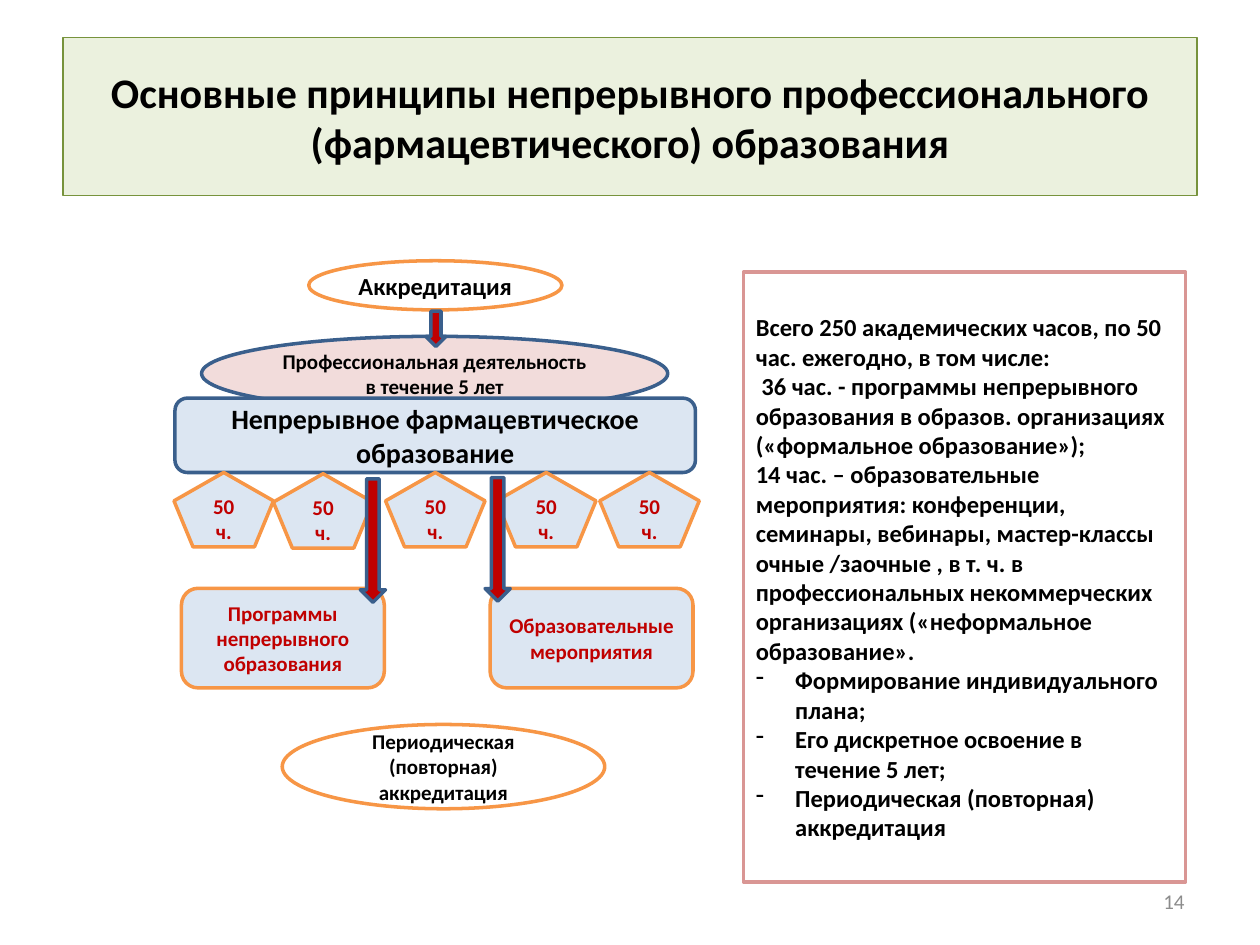
from lxml import etree
from pptx import Presentation
from pptx.dml.color import RGBColor
from pptx.enum import shapes, text
from pptx.oxml import ns
from pptx.util import Pt

KIND = shapes.MSO_SHAPE
MID = text.PP_ALIGN.CENTER
BLACK, RED, BLUE = "000000", "C00000", "DCE6F2"
NAVY, ORANGE, WHITE = "3A5F8C", "F79646", "FFFFFF"


def paint(item, fill, line, width=2):
    if fill:
        item.fill.solid()
        item.fill.fore_color.rgb = RGBColor.from_string(fill)
    else:
        item.fill.background()
    item.line.color.rgb = RGBColor.from_string(line)
    item.line.width = Pt(width)


def write(item, lines, size, color, align=MID, bold=True):
    frame = item.text_frame
    frame.word_wrap = True
    frame.vertical_anchor = text.MSO_ANCHOR.MIDDLE
    for i, words in enumerate(lines):
        para = frame.add_paragraph() if i else frame.paragraphs[0]
        para.alignment = align
        run = para.add_run()
        run.text = words
        run.font.name = "Calibri"
        run.font.size = Pt(size)
        run.font.bold = bold
        run.font.color.rgb = RGBColor.from_string(color)


deck = Presentation()
deck.slide_width, deck.slide_height = Pt(720), Pt(540)
slide = deck.slides.add_slide(deck.slide_layouts[5])

# Title
title = slide.shapes.title
title.left, title.top, title.width, title.height = Pt(36), Pt(21.6), Pt(648), Pt(90)
paint(title, "EBF1DE", "77933C", 0.75)
write(title, ["Основные принципы непрерывного профессионального "
              "(фармацевтического) образования"], 24, BLACK)

# Scheme: kind, left, top, width, height, fill, line, words, size, colour
oval, block = KIND.OVAL, KIND.ROUNDED_RECTANGLE
parts = [
    (oval, 176.4, 149, 144.7, 28.1, WHITE, ORANGE, "Аккредитация", 14, BLACK),
    (oval, 115.2, 192.2, 266.4, 42.5, "F2DCDB", NAVY,
     "Профессиональная деятельность в течение 5 лет", 12, BLACK),
    (block, 100, 227.5, 297.4, 42.5, BLUE, NAVY,
     "Непрерывное фармацевтическое образование", 16, BLACK),
]
# Hours for each of the five years
for left, top in [(99.4, 270), (156.2, 270.7), (220.3, 270), (283.7, 270), (342.7, 270)]:
    parts.append((KIND.REGULAR_PENTAGON, left, top, 56.9, 42.5, BLUE, ORANGE,
                  "50 ч.", 12, RED))
parts += [
    (block, 103.7, 336.2, 115.9, 56.9, BLUE, ORANGE,
     "Программы непрерывного образования", 12, RED),
    (block, 280.1, 336.2, 115.9, 56.9, BLUE, ORANGE,
     "Образовательные мероприятия", 12, RED),
    (oval, 161.3, 414, 184.3, 48.2, WHITE, ORANGE,
     "Периодическая (повторная) аккредитация", 12, BLACK),
]
# Arrows
for left, top, width, height in [(243.4, 177.8, 11.5, 20.2), (205.9, 273.6, 14.4, 70.6),
                                 (277.2, 272.9, 14.4, 70.6)]:
    parts.append((KIND.DOWN_ARROW, left, top, width, height, RED, NAVY, "", 12, BLACK))

for kind, left, top, width, height, fill, line, words, size, color in parts:
    part = slide.shapes.add_shape(kind, Pt(left), Pt(top), Pt(width), Pt(height))
    part.shadow.inherit = False
    paint(part, fill, line)
    if words:
        write(part, [words], size, color)

# Notes on the hours
notes = [
    "Всего 250 академических часов, по 50 час. ежегодно, в том числе:",
    " 36 час. - программы непрерывного образования в образов. организациях "
    "(«формальное образование»);",
    "14 час. – образовательные мероприятия: конференции, семинары, вебинары, "
    "мастер-классы очные /заочные , в т. ч. в профессиональных некоммерческих "
    "организациях («неформальное образование».",
    "Формирование индивидуального плана;",
    "Его дискретное освоение в течение 5 лет;",
    "Периодическая (повторная) аккредитация",
]
panel = slide.shapes.add_shape(KIND.RECTANGLE, Pt(424.8), Pt(155.5), Pt(252.7), Pt(348.5))
panel.shadow.inherit = False
paint(panel, None, "D99694")
write(panel, notes, 14, BLACK, text.PP_ALIGN.LEFT)
for para in panel.text_frame.paragraphs[3:]:
    props = para._p.get_or_add_pPr()
    props.set("marL", str(Pt(22.5)))
    props.set("indent", str(Pt(-22.5)))
    etree.SubElement(props, ns.qn("a:buChar")).set("char", "-")

# Slide number
number = slide.shapes.add_textbox(Pt(516.2), Pt(500.4), Pt(167.8), Pt(28.8))
write(number, ["14"], 12, "8C8C8C", text.PP_ALIGN.RIGHT, False)

deck.save("out.pptx")
